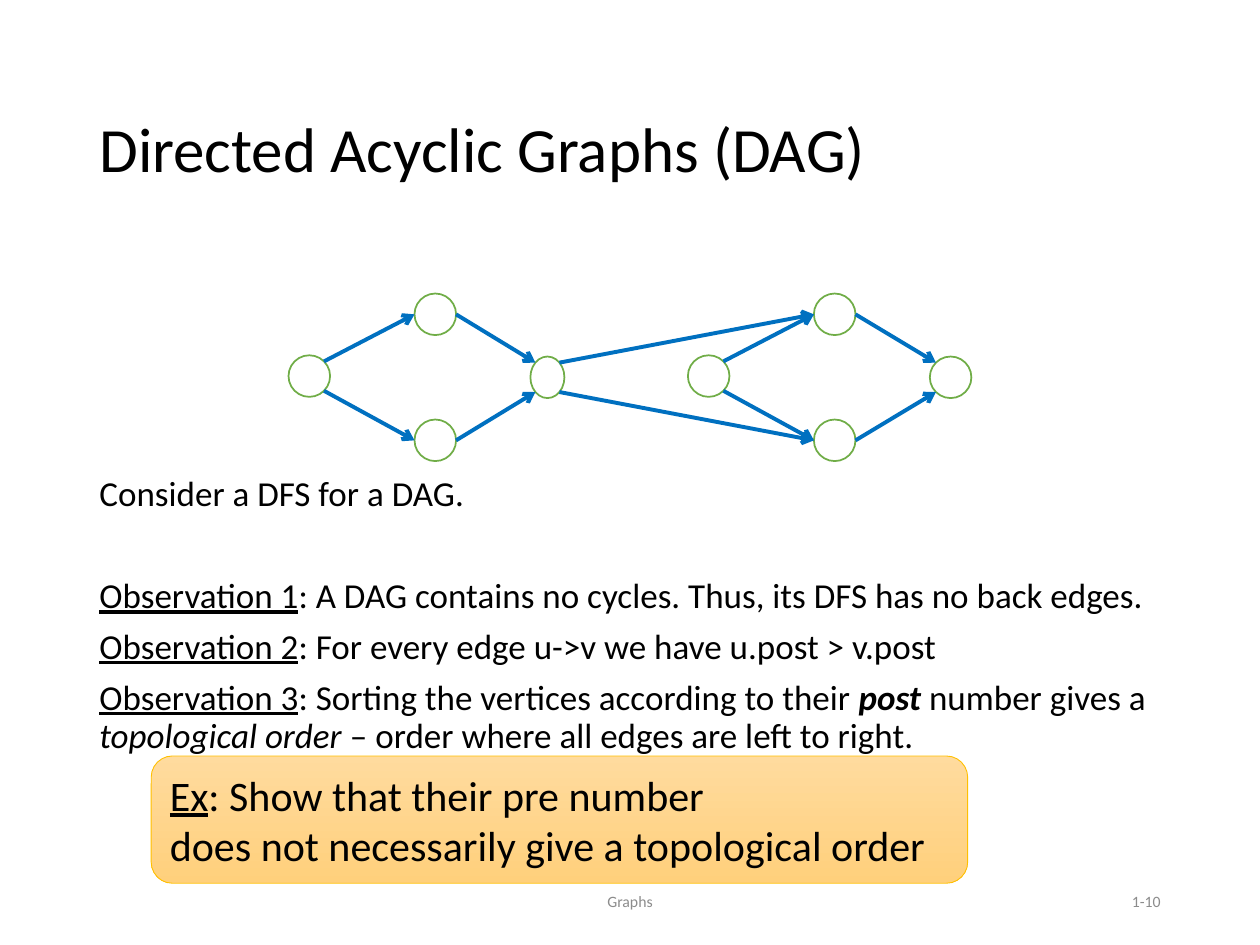
from math import sqrt
from lxml import etree
from pptx import Presentation
from pptx.dml.color import RGBColor
from pptx.enum.shapes import MSO_CONNECTOR, MSO_SHAPE
from pptx.enum.text import MSO_ANCHOR, PP_ALIGN
from pptx.oxml.ns import qn
from pptx.util import Inches, Pt

STRAIGHT = MSO_CONNECTOR.STRAIGHT
OVAL, ROUNDED = MSO_SHAPE.OVAL, MSO_SHAPE.ROUNDED_RECTANGLE
TOP, MIDDLE = MSO_ANCHOR.TOP, MSO_ANCHOR.MIDDLE
LEFT, CENTER, RIGHT = PP_ALIGN.LEFT, PP_ALIGN.CENTER, PP_ALIGN.RIGHT

BLACK = RGBColor(0, 0, 0)
WHITE = RGBColor(255, 255, 255)
GRAY = RGBColor(0x8C, 0x8C, 0x8C)
GREEN = RGBColor(0x70, 0xAD, 0x47)
BLUE = RGBColor(0, 0x70, 0xC0)
GOLD = RGBColor(0xFF, 0xC0, 0)
GRADIENT = (RGBColor(0xFF, 0xDB, 0x9E), RGBColor(0xFF, 0xD0, 0x7C))
FONT = "Calibri"

TITLE = [[("Directed Acyclic Graphs (DAG)", "")]]
FOOTER = [[("Graphs", "")]]
NUMBER = [[("1-10", "")]]
BODY = [
    [("Consider a DFS for a DAG.", "")],
    [("Observation 1", "u"),
     (": A DAG contains no cycles. Thus, its DFS has no back edges.", "")],
    [("Observation 2", "u"), (": For every edge u->v we have u.post > v.post", "")],
    [("Observation 3", "u"), (": Sorting the vertices according to their ", ""),
     ("post", "bi"), (" number gives a ", ""), ("topological order ", "i"),
     ("– order where all edges are left to right.", "")],
]
BODY_GAPS = [0, 36.6, 7.5, 7.5]
EXERCISE = [[("Ex", "u"), (": Show that their pre number", ""), ("\n", ""),
             ("does not necessarily give a topological order", "")]]

NODE = 0.33
NODES = {
    "a": (2.29, 2.82, NODE), "b": (3.29, 3.33, NODE),
    "c": (3.29, 2.33, NODE), "d": (4.21, 2.83, 0.27),
    "e": (5.46, 2.82, NODE), "f": (6.46, 3.33, NODE),
    "g": (6.46, 2.33, NODE), "h": (7.38, 2.83, NODE),
}
OUTER = "bcfg"
EDGES = ["ac", "ab", "cd", "bd", "dg", "df", "eg", "ef", "gh", "fh"]


def write(shape, paragraphs, size, color=BLACK, align=LEFT, anchor=MIDDLE,
          gaps=(0,), spacing=1.0):
    frame = shape.text_frame
    frame.word_wrap = True
    frame.vertical_anchor = anchor
    for index, (spans, gap) in enumerate(zip(paragraphs, gaps)):
        para = frame.add_paragraph() if index else frame.paragraphs[0]
        para.alignment = align
        para.space_before = Pt(gap)
        para.line_spacing = spacing
        for text, style in spans:
            if text == "\n":
                para.add_line_break()
                continue
            span = para.add_run()
            span.text = text
            font = span.font
            font.name, font.size, font.color.rgb = FONT, Pt(size), color
            font.bold, font.italic = "b" in style, "i" in style
            font.underline = "u" in style


def add_text(page, place, *args, **options):
    box = page.shapes.add_textbox(*map(Inches, place))
    write(box, *args, **options)
    return box


def add_node(group, left, top, width):
    node = group.shapes.add_shape(OVAL, *map(Inches, (left, top, width, NODE)))
    node.shadow.inherit = False
    node.fill.solid()
    node.fill.fore_color.rgb = WHITE
    node.line.color.rgb = GREEN
    node.line.width = Pt(1)


def edge_point(name, other, side):
    left, top, width = NODES[name]
    x, y = left + width / 2, top + NODE / 2
    if name in OUTER:
        return x + side * width / 2, y
    vertical = 1 if NODES[other][1] > top else -1
    return x + side * width / 2 / sqrt(2), y + vertical * NODE / 2 / sqrt(2)


def add_edge(group, start, end):
    points = edge_point(start, end, 1) + edge_point(end, start, -1)
    edge = group.shapes.add_connector(STRAIGHT, *map(Inches, points))
    edge.line.color.rgb = BLUE
    edge.line.width = Pt(2.25)
    etree.SubElement(edge.line._get_or_add_ln(), qn("a:tailEnd"), type="arrow")
    etree.SubElement(edge._element.spPr, qn("a:effectLst"))


def add_exercise(page):
    box = page.shapes.add_shape(ROUNDED, *map(Inches, (1.2, 6, 6.48, 1.01)))
    box.shadow.inherit = False
    box.fill.gradient()
    box.fill.gradient_angle = 270
    for stop, color, position in zip(box.fill.gradient_stops, GRADIENT, (0, 1)):
        stop.color.rgb = color
        stop.position = position
    box.line.color.rgb = GOLD
    box.line.width = Pt(0.5)
    write(box, EXERCISE, 24)


def main():
    deck = Presentation()
    deck.slide_width, deck.slide_height = Inches(10), Inches(7.5)
    page = deck.slides.add_slide(deck.slide_layouts[6])
    add_text(page, (0.69, 0.4, 8.62, 1.45), TITLE, 36, gaps=[6], spacing=1.15)
    add_text(page, (3.31, 6.95, 3.38, 0.4), FOOTER, 9, GRAY, CENTER)
    add_text(page, (7.06, 6.95, 2.25, 0.4), NUMBER, 9, GRAY, RIGHT)
    body = add_text(page, (0.69, 2.07, 8.62, 4.76), BODY, 20, anchor=TOP,
                    gaps=BODY_GAPS, spacing=0.9)
    body.text_frame.margin_top = Inches(1.71)
    graph = page.shapes.add_group_shape()
    for place in NODES.values():
        add_node(graph, *place)
    for start, end in EDGES:
        add_edge(graph, start, end)
    add_exercise(page)
    deck.save("out.pptx")


if __name__ == "__main__":
    main()
